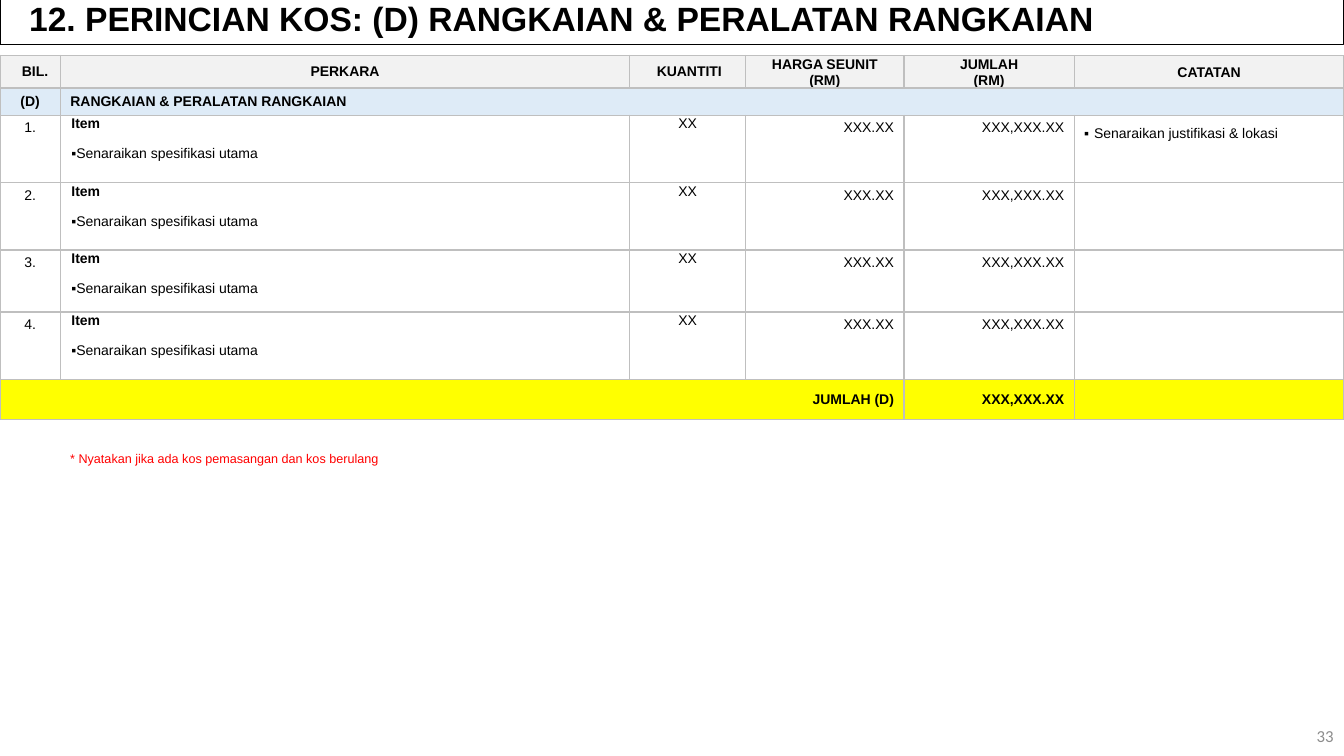
from lxml import etree
from pptx import Presentation
from pptx import util as u
from pptx.dml.color import RGBColor
from pptx.enum import text
from pptx.oxml.ns import qn

COLORS = {"black": "000000", "red": "FF0000", "number": "8C8C8C",
          "border": "BFBFBF", "header": "F2F2F2", "section": "DEEBF7",
          "total": "FFFF00"}
LEFT, CENTER, RIGHT = text.PP_ALIGN.LEFT, text.PP_ALIGN.CENTER, text.PP_ALIGN.RIGHT
MIDDLE, TOP = text.MSO_ANCHOR.MIDDLE, text.MSO_ANCHOR.TOP


def write(tf, words, size=10, bold=False, color="black", font="Arial", align=LEFT,
          left=0, indent=0, line=None, after=None, bullet=None):
    """Fill the first empty paragraph of a text frame, or add one."""
    p = tf.paragraphs[-1]
    if p.runs:
        p = tf.add_paragraph()
    p.alignment = align
    if line:
        p.line_spacing = line
    if after:
        p.space_after = u.Pt(after)
    pPr = p._p.get_or_add_pPr()
    pPr.set("marL", str(u.Cm(left)))
    pPr.set("indent", str(u.Cm(indent)))
    if bullet:
        etree.SubElement(pPr, qn("a:buFont"), typeface="Arial")
        etree.SubElement(pPr, qn("a:buChar"), char=bullet)
    else:
        etree.SubElement(pPr, qn("a:buNone"))
    if not words:
        etree.SubElement(p._p, qn("a:endParaRPr"), sz=str(size * 100))
        return
    r = p.add_run()
    r.text = words
    r.font.size, r.font.bold, r.font.name = u.Pt(size), bold, font
    r.font.color.rgb = RGBColor.from_string(COLORS[color])


def style_cell(cell, fill=None, anchor=TOP, margins=None, open_sides=()):
    """Set the borders, fill, anchor and margins of a table cell."""
    tcPr = cell._tc.get_or_add_tcPr()
    for side in "LRTB":
        ln = etree.SubElement(tcPr, qn("a:ln" + side), w=str(u.Pt(1)))
        if side in open_sides:
            etree.SubElement(ln, qn("a:noFill"))
        else:
            solid = etree.SubElement(ln, qn("a:solidFill"))
            etree.SubElement(solid, qn("a:srgbClr"), val=COLORS["border"])
    if fill:
        cell.fill.solid()
        cell.fill.fore_color.rgb = RGBColor.from_string(COLORS[fill])
    else:
        cell.fill.background()
    cell.vertical_anchor = anchor
    if margins is not None:
        cell.margin_left = cell.margin_right = cell.margin_top = u.Cm(margins)
        cell.margin_bottom = 0


prs = Presentation()
prs.slide_width, prs.slide_height = u.Cm(33.87), u.Cm(19.05)
s = prs.slides.add_slide(prs.slide_layouts[5])

# Title
title = s.shapes.title
title.left, title.top, title.width, title.height = 0, u.Cm(-0.08), u.Cm(33.87), u.Cm(1.2)
title.line.color.rgb = RGBColor.from_string(COLORS["black"])
title.line.width = u.Pt(0.75)
tf = title.text_frame
tf.word_wrap, tf.auto_size, tf.vertical_anchor = True, text.MSO_AUTO_SIZE.NONE, MIDDLE
write(tf, "12. PERINCIAN KOS: (D) RANGKAIAN & PERALATAN RANGKAIAN",
      size=24, bold=True, left=0.48, line=0.9)

# Cost table
widths = [1.52, 14.35, 2.92, 3.99, 4.29, 6.8]
heights = [0.81, 0.65, 1.7, 1.7, 1.56, 1.71, 1]
table = s.shapes.add_table(len(heights), len(widths), 0, u.Cm(1.4),
                           u.Cm(sum(widths)), u.Cm(sum(heights))).table
table.first_row = table.horz_banding = False
for column, width in zip(table.columns, widths):
    column.width = u.Cm(width)
for row, height in zip(table.rows, heights):
    row.height = u.Cm(height)

# Header row
headers = [("BIL.", 0.25, 0), ("PERKARA", 0, 0), ("KUANTITI", 0.08, 0),
           ("HARGA SEUNIT\n(RM)", 0, 0.03), ("JUMLAH\n(RM)", 0, 0.03), ("CATATAN", 0, 0.03)]
for col, (label, left, margin) in enumerate(headers):
    cell = table.cell(0, col)
    style_cell(cell, "header", MIDDLE, margin)
    for words in label.split("\n"):
        write(cell.text_frame, words, bold=True, align=CENTER, left=left)

# Section row
for col in range(6):
    open_sides = {0: "", 1: "R", 5: "L"}.get(col, "LR")
    style_cell(table.cell(1, col), "section", MIDDLE, open_sides=open_sides)
    write(table.cell(1, col).text_frame,
          {0: "(D)", 1: "RANGKAIAN & PERALATAN RANGKAIAN"}.get(col, ""),
          bold=True, align=LEFT if col else CENTER)
table.cell(1, 1).merge(table.cell(1, 4))

# Item rows
for number in range(1, 5):
    cells = list(table.rows[number + 1].cells)
    for col, cell in enumerate(cells):
        style_cell(cell, margins=0.03 if col in (1, 2) else None)
    bil, item, quantity, price, amount, note = [cell.text_frame for cell in cells]
    write(bil, f"{number}.", align=CENTER)
    write(item, "Item", bold=True, left=0.25, after=6)
    write(item, "Senaraikan spesifikasi utama", left=0.25, line=u.Pt(15.1), bullet="▪")
    write(quantity, "XX", align=CENTER)
    write(price, "XXX.XX", align=RIGHT)
    write(amount, "XXX,XXX.XX", align=RIGHT)
    if number == 1:
        write(note, "Senaraikan justifikasi & lokasi", left=0.25, indent=-0.25,
              line=u.Pt(15.1), bullet="▪")
    else:
        write(note, "")

# Total row
for col in range(6):
    style_cell(table.cell(6, col), "total", MIDDLE)
    write(table.cell(6, col).text_frame, {0: "JUMLAH (D)", 4: "XXX,XXX.XX"}.get(col, ""),
          bold=True, align=RIGHT)
table.cell(6, 0).merge(table.cell(6, 3))

# Footnote
tf = s.shapes.add_textbox(u.Cm(1.52), u.Cm(11.23), u.Cm(8.4), u.Cm(0.64)).text_frame
tf.word_wrap = True
write(tf, "* Nyatakan jika ada kos pemasangan dan kos berulang", size=9, color="red",
      align=text.PP_ALIGN.JUSTIFY, left=0.48, indent=-0.48)

# Slide number
tf = s.shapes.add_textbox(u.Cm(26.24), u.Cm(18.03), u.Cm(7.62), u.Cm(1.02)).text_frame
tf.word_wrap, tf.vertical_anchor = True, MIDDLE
write(tf, "33", size=12, color="number", font="Calibri", align=RIGHT)

prs.save("out.pptx")
